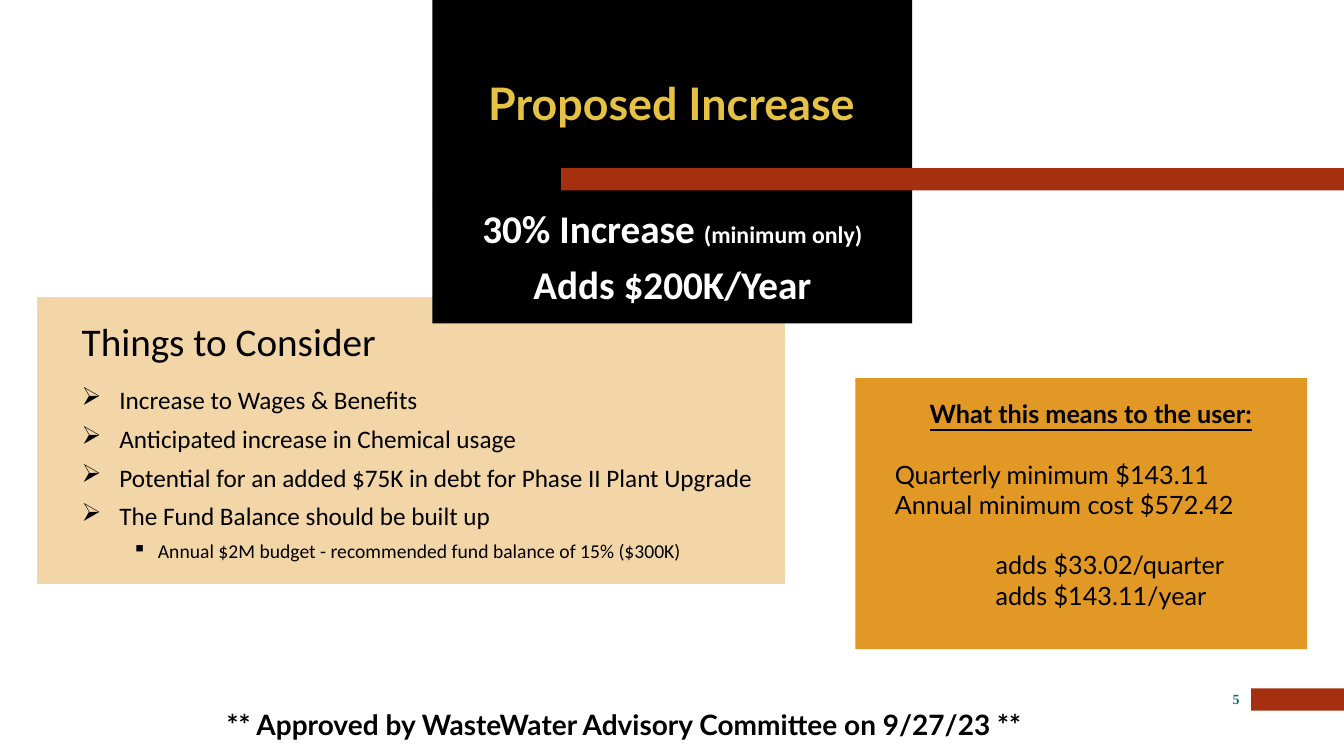
"""Build the slide on the proposed rate increase."""
from lxml.etree import SubElement
from pptx import Presentation
from pptx.dml.color import RGBColor as RGB
from pptx.enum.shapes import MSO_SHAPE as Shape
from pptx.enum.text import MSO_ANCHOR as Anchor, PP_ALIGN as Align
from pptx.oxml.ns import qn
from pptx.util import Cm, Pt

BLACK = RGB(0x00, 0x00, 0x00)
WHITE = RGB(0xFF, 0xFF, 0xFF)
RED = RGB(0xA5, 0x30, 0x0F)
SAND = RGB(0xF3, 0xD6, 0xA8)
AMBER = RGB(0xE1, 0x98, 0x25)
GOLD = RGB(0xE5, 0xC2, 0x43)
TEAL = RGB(0x00, 0x6F, 0x83)


def add_box(left, top, width, height, fill=None, pad=(0, 0, 0, 0), anchor=Anchor.TOP):
    area = Cm(left), Cm(top), Cm(width), Cm(height)
    if fill is None:
        box = slide.shapes.add_textbox(*area)
    else:
        box = slide.shapes.add_shape(Shape.RECTANGLE, *area)
        box.shadow.inherit = False
        box.fill.solid()
        box.fill.fore_color.rgb = fill
        box.line.fill.background()
    frame = box.text_frame
    frame.word_wrap = True
    frame.vertical_anchor = anchor
    frame.margin_left, frame.margin_top, frame.margin_right, frame.margin_bottom = map(Cm, pad)
    return box


def add_line(box, text, size, face, color=BLACK, bold=False, align=Align.LEFT,
             after=0, left=0, hang=0, bullet=None):
    frame = box.text_frame
    para = frame.paragraphs[0]
    if para.runs:
        para = frame.add_paragraph()
    para.add_run().text = text
    para.alignment = align
    para.space_after = Pt(after)
    font = para.font
    font.size, font.name, font.bold = Pt(size), face, bold
    font.color.rgb = color
    props = para._p.get_or_add_pPr()
    props.set("marL", str(Cm(left)))
    props.set("indent", str(-Cm(hang)))
    if bullet:
        mark = SubElement(props, qn("a:buChar"))
        mark.set("char", bullet)
        props.insert(props.index(props.find(qn("a:defRPr"))), mark)
    return para


deck = Presentation()
deck.slide_width, deck.slide_height = Cm(33.87), Cm(19.05)
slide = deck.slides.add_slide(deck.slide_layouts[6])

add_box(10.9, 0, 12.09, 5.05, BLACK)
add_box(31.53, 17.35, 2.34, 0.56, RED)
add_box(14.14, 4.24, 19.73, 0.56, RED)

points = add_box(0.93, 7.48, 18.86, 7.25, SAND, (0.51,) * 4)
points.line.color.rgb = WHITE
points.line.width = Pt(0.75)
add_line(points, "Things to Consider", 28, "Calibri", after=14.6, left=1.57, hang=0.95)
for text in (
    "Increase to Wages & Benefits",
    "Anticipated increase in Chemical usage",
    "Potential for an added $75K in debt for Phase II Plant Upgrade",
    "The Fund Balance should be built up",
):
    add_line(points, text, 18, "Calibri", after=6, left=1.57, hang=0.95, bullet="➢")
budget = add_line(points, "Annual $2M budget - recommended fund balance of 15% ($300K)",
                  14, "Calibri", after=6, left=2.54, hang=0.64, bullet="▪")
budget.level = 1

title = add_box(11.5, 0, 10.85, 4.83, pad=(0, 0.51, 0, 0), anchor=Anchor.MIDDLE)
head = add_line(title, "Proposed Increase", 32, "Lato", GOLD, True, Align.CENTER)
head.line_spacing = 0.9

rate = add_box(10.9, 5.03, 12.09, 3.12, BLACK, (0.51, 0.25, 0.51, 0))
for text in ("30% Increase ", "Adds $200K/Year"):
    para = add_line(rate, text, 28, "Calibri", WHITE, True, Align.CENTER)
    para.line_spacing = 0.9
    para.space_before = Pt(10)
note = rate.text_frame.paragraphs[0].add_run()
note.text = "(minimum only)"
note.font.size = Pt(17)

number = add_box(30.78, 17.4, 0.74, 0.64)
add_line(number, "5", 10, "Times New Roman", TEAL, True, Align.CENTER)

vote = add_box(0.61, 17.3, 30.23, 1.5, pad=(0, 0.51, 0, 0), anchor=Anchor.MIDDLE)
para = add_line(vote, "** Approved by WasteWater Advisory Committee on 9/27/23 **",
                20, "Lato", bold=True, align=Align.CENTER)
para.line_spacing = 0.9

user = add_box(21.56, 9.53, 11.38, 6.83, AMBER, (0.51,) * 4)
head = add_line(user, "What this means to the user:", 18, "Lato", bold=True,
                align=Align.CENTER, after=21.6, left=0.48)
head.font.underline = True
for text, left, after in (
    ("Quarterly minimum $143.11", 0.48, 0),
    ("Annual minimum cost $572.42", 0.48, 21.6),
    ("adds $33.02/quarter", 3.02, 0),
    ("adds $143.11/year", 3.02, 0),
):
    add_line(user, text, 18, "Lato", left=left, after=after)

deck.save("out.pptx")
